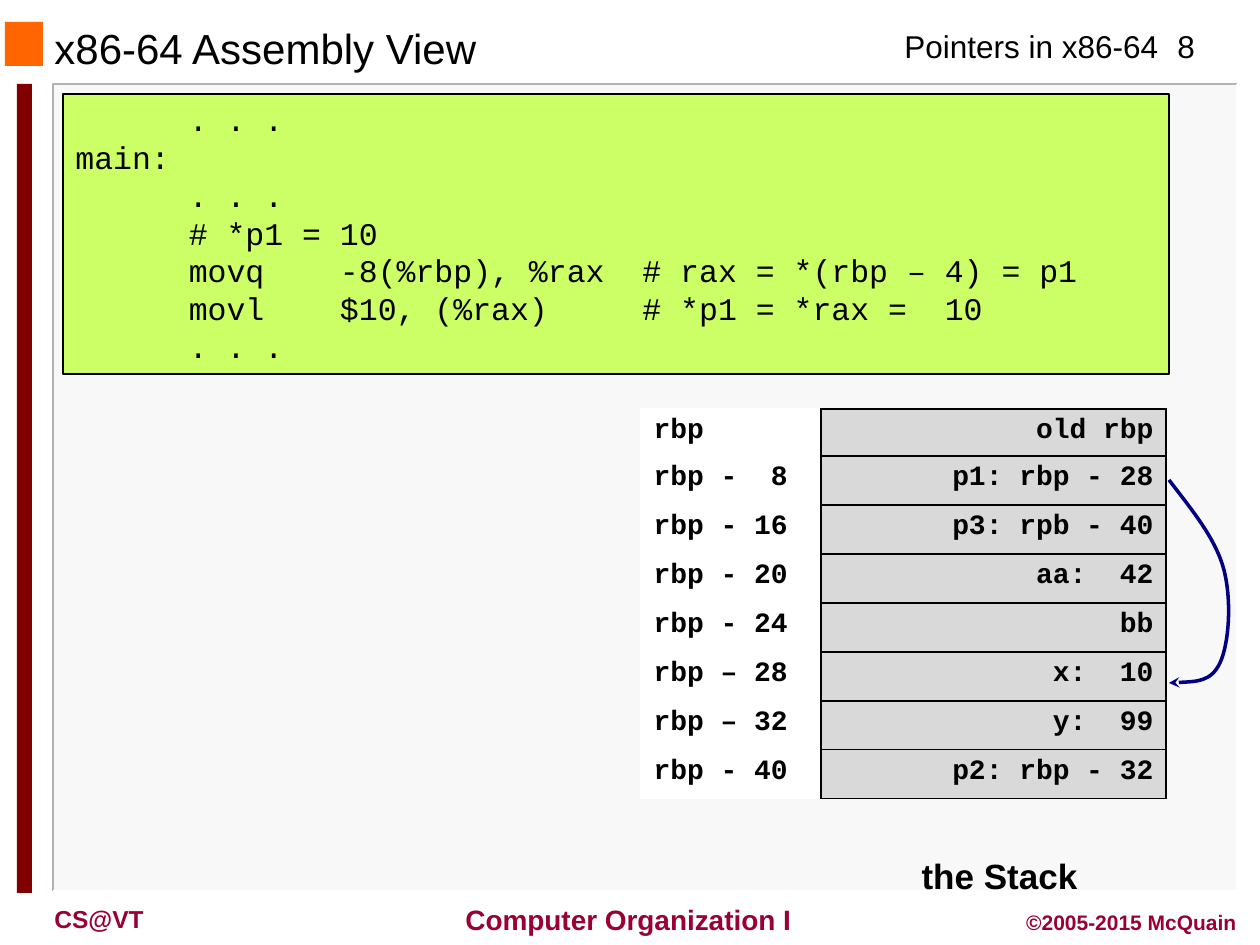
from lxml import etree
from pptx import Presentation
from pptx.dml.color import RGBColor
from pptx.enum.shapes import MSO_SHAPE
from pptx.enum.text import MSO_ANCHOR, PP_ALIGN
from pptx.oxml.ns import qn
from pptx.util import Emu, Pt

LEFT, CENTER, RIGHT = PP_ALIGN.LEFT, PP_ALIGN.CENTER, PP_ALIGN.RIGHT
TOP, MIDDLE = MSO_ANCHOR.TOP, MSO_ANCHOR.MIDDLE
RECTANGLE = MSO_SHAPE.RECTANGLE
BLACK = RGBColor(0x00, 0x00, 0x00)
WHITE = RGBColor(0xFF, 0xFF, 0xFF)
PANEL = RGBColor(0xF8, 0xF8, 0xF8)
PANEL_EDGE = RGBColor(0xB2, 0xB2, 0xB2)
ORANGE = RGBColor(0xFF, 0x66, 0x00)
MAROON = RGBColor(0x80, 0x00, 0x00)
CRIMSON = RGBColor(0x99, 0x00, 0x33)
LIME = RGBColor(0xCC, 0xFF, 0x66)
GREY = RGBColor(0xD9, 0xD9, 0xD9)
NAVY = RGBColor(0x00, 0x00, 0x80)
SANS, MONO = "Arial", "Courier New"
SCALE = 914400 / 126  # EMU per px

# Content
CODE = [
    "      . . .",
    "main:",
    "      . . .",
    "      # *p1 = 10",
    "      movq    -8(%rbp), %rax  # rax = *(rbp – 4) = p1",
    "      movl    $10, (%rax)     # *p1 = *rax =  10",
    "      . . .",
]
STACK = [
    ("rbp", "old rbp"),
    ("rbp -  8", "p1: rbp - 28"),
    ("rbp - 16", "p3: rpb - 40"),
    ("rbp - 20", "aa:  42"),
    ("rbp - 24", "bb"),
    ("rbp – 28", "x:  10"),
    ("rbp – 32", "y:  99"),
    ("rbp - 40", "p2: rbp - 32"),
]
# text, box (left, top, width, height), size, bold, colour, alignment, anchor, wrap
LABELS = [
    ("Pointers in x86-64", (892, 21, 282, 50), 18, False, BLACK, LEFT, TOP, False),
    ("8", (1144, 21, 84, 50), 18, False, BLACK, CENTER, TOP, True),
    ("x86-64 Assembly View", (42, 24, 798, 48), 24, False, BLACK, LEFT, MIDDLE, True),
    (" Computer Organization I", (441, 896, 367, 47), 16, True, CRIMSON, CENTER, MIDDLE, False),
    ("CS@VT", (42, 898, 189, 42), 14, True, CRIMSON, LEFT, TOP, True),
    ("©2005-2015 McQuain", (987, 903, 262, 38), 12, True, CRIMSON, RIGHT, TOP, True),
    ("the Stack", (876, 848, 247, 55), 20, True, BLACK, CENTER, TOP, True),
]
PANEL_BOX = (53, 84, 1184, 807)
POINTER = [(1169, 480), (1192, 510), (1216, 539), (1224, 570), (1232, 601),
           (1229, 644), (1220, 663), (1211, 682), (1191, 682), (1169, 683)]


def px(n):
    return Emu(round(n * SCALE))


def style(paragraph, face, size, bold, color, align=LEFT):
    paragraph.alignment = align
    font = paragraph.font
    font.name, font.size, font.bold = face, Pt(size), bold
    font.color.rgb = color


def rectangle(shapes, box, fill):
    rect = shapes.add_shape(RECTANGLE, *map(px, box))
    rect.shadow.inherit = False
    rect.fill.solid()
    rect.fill.fore_color.rgb = fill
    rect.line.fill.background()
    return rect


def outline(shapes, points, color, width):
    builder = shapes.build_freeform(*points[0], scale=SCALE)
    builder.add_line_segments(points[1:], close=False)
    line = builder.convert_to_shape()
    line.shadow.inherit = False
    line.fill.background()
    line.line.color.rgb = color
    line.line.width = Pt(width)
    return line


def add_label(shapes, text, box, size, bold, color, align, anchor, wrap):
    frame = shapes.add_textbox(*map(px, box)).text_frame
    frame.word_wrap = wrap
    frame.vertical_anchor = anchor
    frame.text = text
    style(frame.paragraphs[0], SANS, size, bold, color, align)


def add_code(shapes):
    listing = rectangle(shapes, (63, 94, 1106, 280), LIME)
    listing.line.color.rgb = BLACK
    listing.line.width = Pt(0.75)
    frame = listing.text_frame
    frame.vertical_anchor = TOP
    frame.text = "\n".join(CODE)
    for paragraph in frame.paragraphs:
        style(paragraph, MONO, 18, False, BLACK)


def add_border(cell):
    props = cell._tc.get_or_add_tcPr()
    for side in ("lnL", "lnR", "lnT", "lnB"):
        edge = etree.SubElement(props, qn("a:" + side), w=str(Pt(1)))
        fill = etree.SubElement(edge, qn("a:solidFill"))
        etree.SubElement(fill, qn("a:srgbClr"), val=str(BLACK))


def add_stack(shapes):
    stack = shapes.add_table(len(STACK), 2, px(641), px(409), px(525), px(390)).table
    stack.first_row = stack.horz_banding = False
    for column, width in zip(stack.columns, (180, 345)):
        column.width = px(width)
    for r, entry in enumerate(STACK):
        stack.rows[r].height = px(49 if r else 47)
        for c, text in enumerate(entry):
            cell = stack.cell(r, c)
            if c == 1:
                add_border(cell)
            cell.fill.solid()
            cell.fill.fore_color.rgb = (WHITE, GREY)[c]
            cell.text = text
            style(cell.text_frame.paragraphs[0], MONO, 16, True, BLACK, (LEFT, RIGHT)[c])


def add_pointer(shapes):
    arrow = outline(shapes, POINTER, NAVY, 2)
    # Every three points after the start make one Bezier segment
    steps = list(arrow._element.iter(qn("a:lnTo")))
    for i in range(0, len(steps), 3):
        curve = etree.SubElement(steps[i].getparent(), qn("a:cubicBezTo"))
        for step in steps[i:i + 3]:
            curve.append(step[0])
            step.getparent().remove(step)
    etree.SubElement(arrow.line._get_or_add_ln(), qn("a:tailEnd"), type="stealth")


def main():
    prs = Presentation()
    prs.slide_width, prs.slide_height = px(1260), px(945)
    shapes = prs.slides.add_slide(prs.slide_layouts[6]).shapes

    # Content panel with a grey upper-left and a white lower-right edge
    left, top, width, height = PANEL_BOX
    right, bottom = left + width, top + height
    rectangle(shapes, PANEL_BOX, PANEL)
    outline(shapes, [(right, top), (left, top), (left, bottom)], PANEL_EDGE, 1)
    outline(shapes, [(right, top), (right, bottom), (left, bottom)], WHITE, 1)

    # Orange square and maroon bar
    rectangle(shapes, (5, 22, 38, 44), ORANGE)
    rectangle(shapes, (17, 84, 15, 809), MAROON)

    for label in LABELS:
        add_label(shapes, *label)
    add_code(shapes)
    add_pointer(shapes)
    add_stack(shapes)
    prs.save("out.pptx")


if __name__ == "__main__":
    main()
